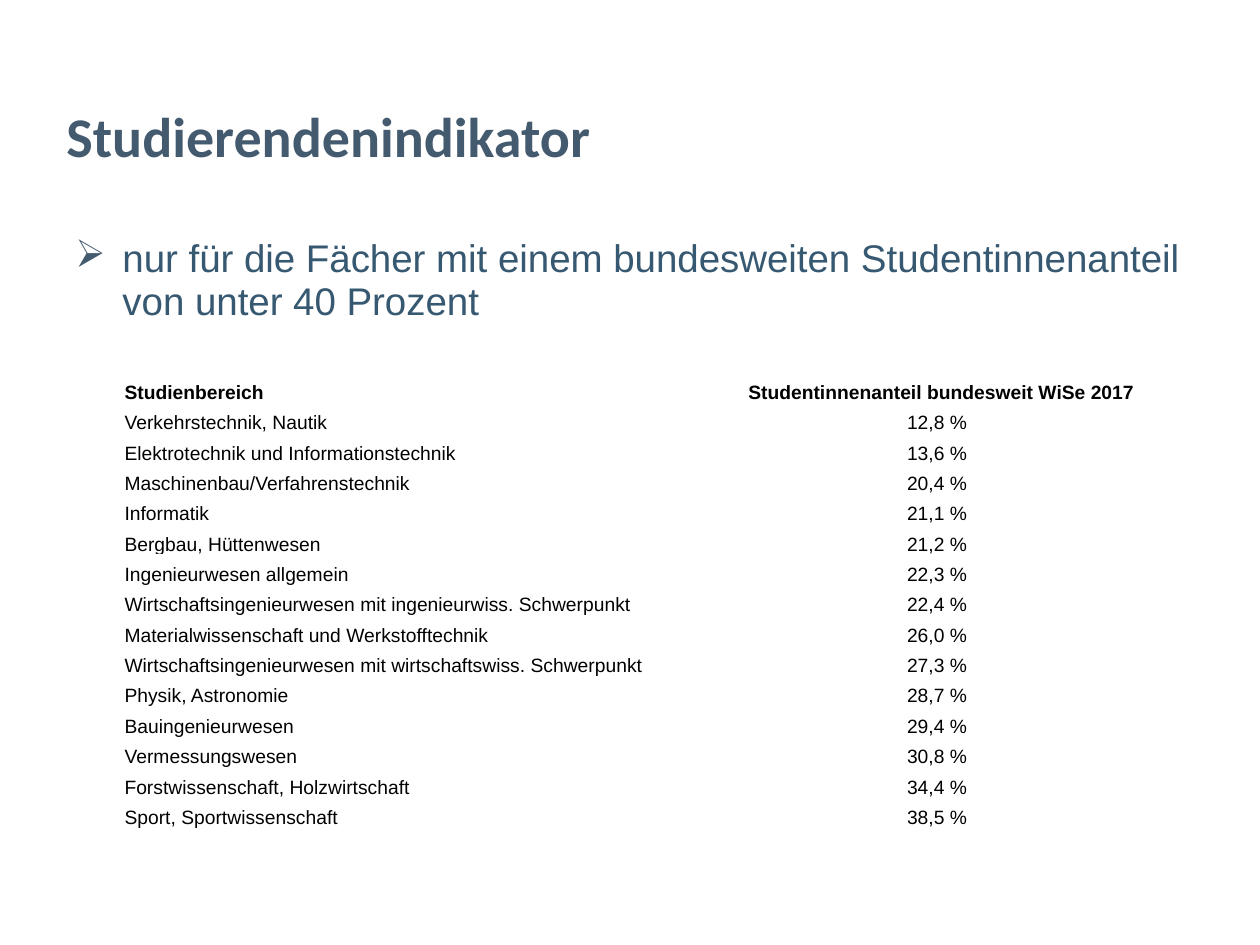
import pptx
import pptx.dml.color
import pptx.enum.text
import pptx.oxml.ns
import pptx.util
from lxml import etree

Cm = pptx.util.Cm
Pt = pptx.util.Pt
Align = pptx.enum.text.PP_ALIGN
Anchor = pptx.enum.text.MSO_ANCHOR

SLATE = "445A6F"
BLUE = "365871"
BLACK = "000000"

HEADER = ("Studienbereich", "Studentinnenanteil bundesweit WiSe 2017")
SUBJECTS = [
    ("Verkehrstechnik, Nautik", "12,8 %"),
    ("Elektrotechnik und Informationstechnik", "13,6 %"),
    ("Maschinenbau/Verfahrenstechnik", "20,4 %"),
    ("Informatik", "21,1 %"),
    ("Bergbau, Hüttenwesen", "21,2 %"),
    ("Ingenieurwesen allgemein", "22,3 %"),
    ("Wirtschaftsingenieurwesen mit ingenieurwiss. Schwerpunkt", "22,4 %"),
    ("Materialwissenschaft und Werkstofftechnik", "26,0 %"),
    ("Wirtschaftsingenieurwesen mit wirtschaftswiss. Schwerpunkt", "27,3 %"),
    ("Physik, Astronomie", "28,7 %"),
    ("Bauingenieurwesen", "29,4 %"),
    ("Vermessungswesen", "30,8 %"),
    ("Forstwissenschaft, Holzwirtschaft", "34,4 %"),
    ("Sport, Sportwissenschaft", "38,5 %"),
]


def color(value):
    return pptx.dml.color.RGBColor.from_string(value)


def write(para, text, size, fill, font="Arial", bold=False, align=Align.LEFT):
    para.alignment = align
    span = para.add_run()
    span.text = text
    span.font.name = font
    span.font.size = Pt(size)
    span.font.bold = bold
    span.font.color.rgb = color(fill)


def add_box(page, left, top, width, height, anchor=Anchor.TOP, inset_top=0.13):
    box = page.shapes.add_textbox(Cm(left), Cm(top), Cm(width), Cm(height))
    frame = box.text_frame
    frame.word_wrap = True
    frame.vertical_anchor = anchor
    frame.margin_top = Cm(inset_top)
    return frame.paragraphs[0]


def set_bullet(para, symbol, fill, indent):
    properties = para._p.get_or_add_pPr()
    properties.set("marL", str(Cm(indent)))
    properties.set("indent", str(-Cm(indent)))
    qualified = pptx.oxml.ns.qn
    bullet_color = etree.SubElement(properties, qualified("a:buClr"))
    etree.SubElement(bullet_color, qualified("a:srgbClr"), val=fill)
    etree.SubElement(properties, qualified("a:buChar"), char=symbol)


def fill_cell(cell, text, bold, align):
    cell.fill.background()
    cell.vertical_anchor = Anchor.BOTTOM
    cell.margin_left = cell.margin_right = cell.margin_top = Cm(0.02)
    cell.margin_bottom = 0
    write(cell.text_frame.paragraphs[0], text, 11, BLACK, bold=bold, align=align)


def add_subject_table(page):
    rows = [HEADER] + SUBJECTS
    frame = page.shapes.add_table(len(rows), 2, Cm(2.49), Cm(7.52), Cm(20.4), Cm(9.19))
    table = frame.table
    table.first_row = False
    table.horz_banding = False
    for column, width in zip(table.columns, (12.4, 8)):
        column.width = Cm(width)
    for index, (subject, share) in enumerate(rows):
        is_header = index == 0
        fill_cell(table.cell(index, 0), subject, is_header, Align.LEFT)
        fill_cell(table.cell(index, 1), share, is_header,
                  Align.RIGHT if is_header else Align.CENTER)


def main():
    deck = pptx.Presentation()
    deck.slide_width = Cm(25.4)
    deck.slide_height = Cm(19.05)
    page = deck.slides.add_slide(deck.slide_layouts[6])

    title = add_box(page, 1.09, 1.73, 22.86, 1.98, anchor=Anchor.MIDDLE)
    write(title, "Studierendenindikator", 32, SLATE, font="Calibri", bold=True)

    statement = add_box(page, 1.27, 4.6, 24.13, 13.72, inset_top=0.2)
    set_bullet(statement, "➢", SLATE, 0.95)
    statement.line_spacing = 0.93
    statement.space_after = Pt(14.2)
    write(statement, "nur für die Fächer mit einem bundesweiten "
          "Studentinnenanteil von unter 40 Prozent", 22, BLUE)

    add_subject_table(page)
    deck.save("out.pptx")


if __name__ == "__main__":
    main()
